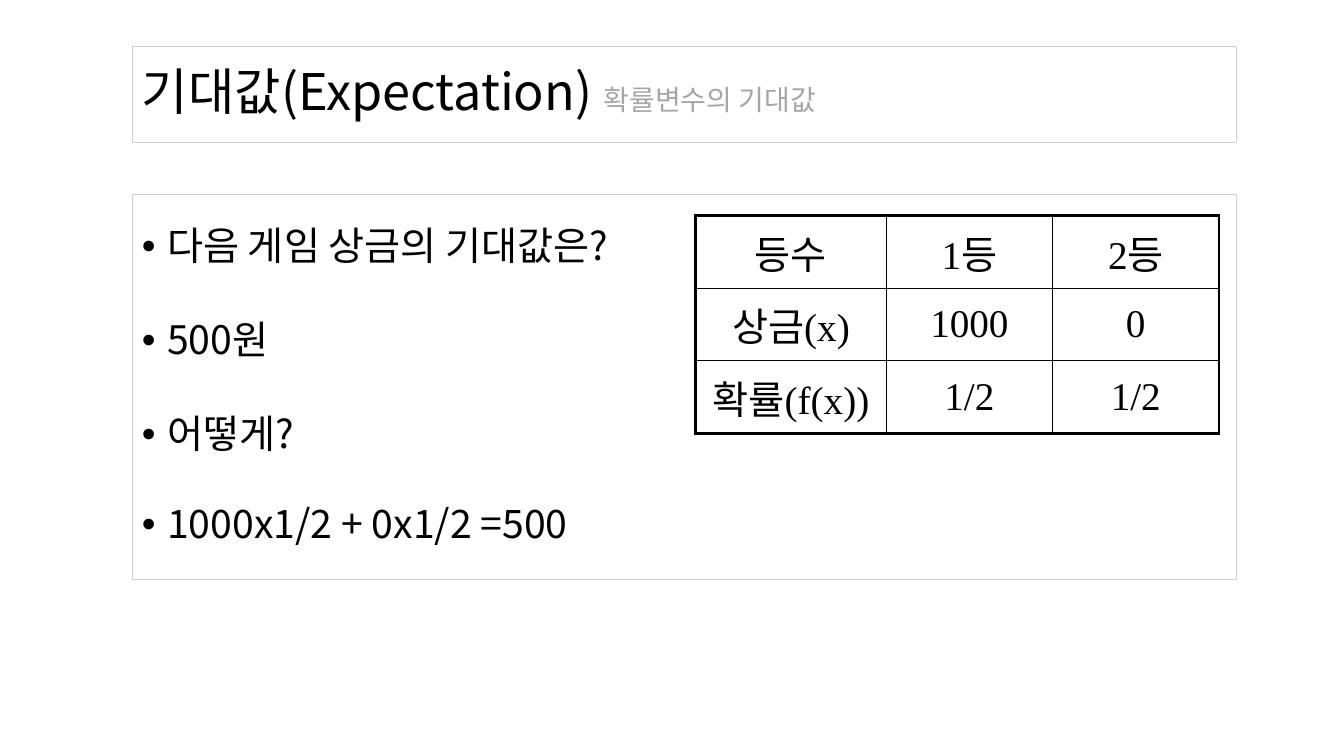
import pptx
import pptx.dml.color
import pptx.enum.shapes
import pptx.enum.text
import pptx.oxml
import pptx.oxml.ns
import pptx.util
from lxml import etree

Inches = pptx.util.Inches
Pt = pptx.util.Pt
RGBColor = pptx.dml.color.RGBColor
qn = pptx.oxml.ns.qn

BLACK = RGBColor(0x00, 0x00, 0x00)
GRAY = RGBColor(0xA6, 0xA6, 0xA6)
FRAME = RGBColor(0xD0, 0xCE, 0xCE)
KOREAN = "Noto Sans CJK KR"
SERIF = "Times New Roman"
THICK, THIN = 2.25, 1


class SlideBuilder:
    """Holds the slide and its style."""

    def __init__(self, page):
        self.page = page

    def style(self, font, size, color=BLACK, name=KOREAN):
        font.size = Pt(size)
        font.name = name
        font.color.rgb = color
        # East Asian letters need their own typeface entry
        latin = font._element.find(qn("a:latin"))
        east_asian = etree.Element(qn("a:ea"), typeface=KOREAN)
        latin.addnext(east_asian)

    def frame(self, left, top, width, height):
        box = self.page.shapes.add_shape(
            pptx.enum.shapes.MSO_SHAPE.RECTANGLE,
            Inches(left), Inches(top), Inches(width), Inches(height))
        box.shadow.inherit = False
        box.fill.background()
        box.line.color.rgb = FRAME
        box.line.width = Pt(0.75)
        text = box.text_frame
        text.word_wrap = True
        text.vertical_anchor = pptx.enum.text.MSO_ANCHOR.MIDDLE
        return text

    def line(self, para):
        para.alignment = pptx.enum.text.PP_ALIGN.LEFT
        para.line_spacing = 0.9

    def title(self, place, spans):
        para = self.frame(*place).paragraphs[0]
        self.line(para)
        for words, size, color in spans:
            span = para.add_run()
            span.text = words
            self.style(span.font, size, color)

    def bullets(self, place, items):
        text = self.frame(*place)
        for index, (words, gap) in enumerate(items):
            para = text.add_paragraph() if index else text.paragraphs[0]
            para.text = words
            self.line(para)
            para.space_before = Pt(gap)
            self.style(para.font, 28)
            properties = para._p.get_or_add_pPr()
            properties.set("marL", str(Inches(0.25)))
            properties.set("indent", str(-Inches(0.25)))
            bullet_font = etree.Element(qn("a:buFont"), typeface="Arial")
            bullet = etree.Element(qn("a:buChar"), char="•")
            properties.find(qn("a:defRPr")).addprevious(bullet_font)
            bullet_font.addnext(bullet)

    def border(self, cell, side, width):
        edge = pptx.oxml.parse_xml(
            f'<a:{side} {pptx.oxml.ns.nsdecls("a")} w="{Pt(width)}">'
            f'<a:solidFill><a:srgbClr val="{BLACK}"/></a:solidFill></a:{side}>')
        cell._tc.get_or_add_tcPr().append(edge)

    def table(self, left, top, widths, row_height, rows):
        grid = self.page.shapes.add_table(
            len(rows), len(widths), Inches(left), Inches(top),
            Inches(sum(widths)), Inches(row_height * len(rows))).table
        grid.first_row = grid.horz_banding = False
        for column, width in zip(grid.columns, widths):
            column.width = Inches(width)
        last_row, last_column = len(rows) - 1, len(widths) - 1
        for r, values in enumerate(rows):
            grid.rows[r].height = Inches(row_height)
            for c, value in enumerate(values):
                cell = grid.cell(r, c)
                cell.text = value
                cell.vertical_anchor = pptx.enum.text.MSO_ANCHOR.MIDDLE
                para = cell.text_frame.paragraphs[0]
                para.alignment = pptx.enum.text.PP_ALIGN.CENTER
                self.style(para.runs[0].font, 28, name=SERIF)
                # Thick outer edges, thin inner ones
                outer = {"lnL": c == 0, "lnR": c == last_column,
                         "lnT": r == 0, "lnB": r == last_row}
                for side, is_outer in outer.items():
                    self.border(cell, side, THICK if is_outer else THIN)
                cell.fill.background()


def main():
    deck = pptx.Presentation()
    deck.slide_width = Inches(13.33)
    deck.slide_height = Inches(7.5)
    builder = SlideBuilder(deck.slides.add_slide(deck.slide_layouts[6]))

    # Title
    builder.title((1.31, 0.46, 10.95, 0.95), [
        ("기대값(Expectation) ", 36, BLACK),
        ("확률변수의 기대값", 20, GRAY),
    ])

    # Question and answer, with the space before each line
    builder.bullets((1.31, 1.93, 10.95, 3.82), [
        ("다음 게임 상금의 기대값은?", 0),
        ("500원", 37),
        ("어떻게?", 37),
        ("1000x1/2 + 0x1/2 =500", 34),
    ])

    # Prize table
    builder.table(6.9, 2.14, [1.89, 1.65, 1.65], 0.72, [
        ["등수", "1등", "2등"],
        ["상금(x)", "1000", "0"],
        ["확률(f(x))", "1/2", "1/2"],
    ])

    deck.save("out.pptx")


if __name__ == "__main__":
    main()
